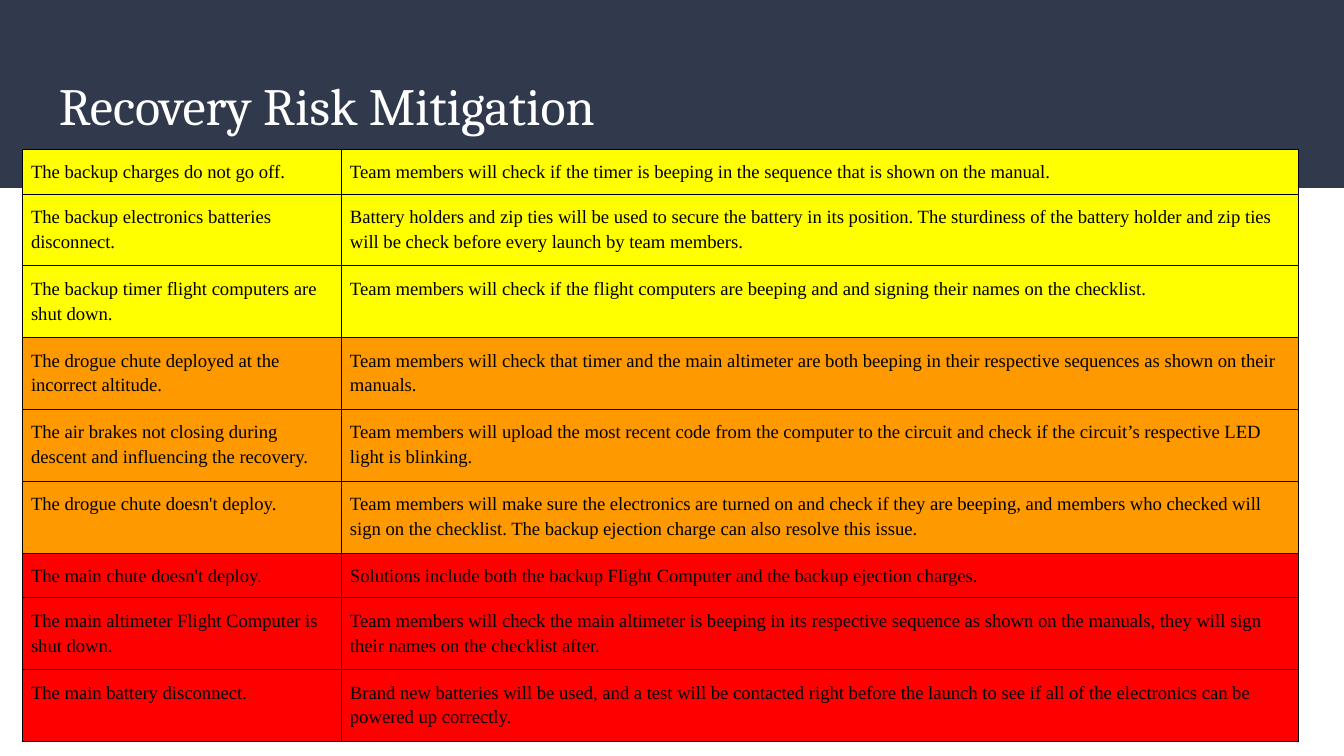
from lxml import etree
from pptx import Presentation
from pptx import util as u
from pptx.dml.color import RGBColor
from pptx.enum import shapes, text
from pptx.oxml import ns

PX = u.Inches(10) / 1344
NAVY = RGBColor(0x31, 0x39, 0x4D)
WHITE = RGBColor(0xFF, 0xFF, 0xFF)
BLACK = RGBColor(0x00, 0x00, 0x00)
YELLOW = RGBColor(0xFF, 0xFF, 0x00)
ORANGE = RGBColor(0xFF, 0x99, 0x00)
RED = RGBColor(0xFF, 0x00, 0x00)

ONE_LINE, TWO_LINES = 43, 68
RISKS = [
    (YELLOW, ONE_LINE, "The backup charges do not go off.",
     "Team members will check if the timer is beeping in the sequence that is shown on the manual."),
    (YELLOW, TWO_LINES, "The backup electronics batteries disconnect.",
     "Battery holders and zip ties will be used to secure the battery in its position. "
     "The sturdiness of the battery holder and zip ties will be check before every launch by team members."),
    (YELLOW, TWO_LINES, "The backup timer flight computers are shut down.",
     "Team members will check if the flight computers are beeping and and signing their names on the checklist."),
    (ORANGE, TWO_LINES, "The drogue chute deployed at the incorrect altitude.",
     "Team members will check that timer and the main altimeter are both beeping in their respective "
     "sequences as shown on their manuals."),
    (ORANGE, TWO_LINES, "The air brakes not closing during descent and influencing the recovery.",
     "Team members will upload the most recent code from the computer to the circuit and check if "
     "the circuit’s respective LED light is blinking."),
    (ORANGE, TWO_LINES, "The drogue chute doesn't deploy.",
     "Team members will make sure the electronics are turned on and check if they are beeping, and members "
     "who checked will sign on the checklist. The backup ejection charge can also resolve this issue."),
    (RED, ONE_LINE, "The main chute doesn't deploy.",
     "Solutions include both the backup Flight Computer and the backup ejection charges."),
    (RED, TWO_LINES, "The main altimeter Flight Computer is shut down.",
     "Team members will check the main altimeter is beeping in its respective sequence as shown on the manuals, "
     "they will sign their names on the checklist after."),
    (RED, TWO_LINES, "The main battery disconnect.",
     "Brand new batteries will be used, and a test will be contacted right before the launch to see if all "
     "of the electronics can be powered up correctly."),
]


def px(length):
    """Turn whole px into EMU."""
    return u.Emu(round(length * PX))


def set_margins(frame, margin):
    """Give a cell or text frame the same margin on every side."""
    frame.margin_left = frame.margin_right = px(margin)
    frame.margin_top = frame.margin_bottom = px(margin)


def format_text(frame, font_name, size, color):
    """Set the font of every run in a text frame."""
    for paragraph in frame.paragraphs:
        for run in paragraph.runs:
            run.font.name = font_name
            run.font.size = u.Pt(size)
            run.font.color.rgb = color


def add_header(slide, left, top, width, height):
    """Draw the title band with the slide title inside it."""
    band = slide.shapes.add_shape(
        shapes.MSO_SHAPE.RECTANGLE, px(left), px(top), px(width), px(height))
    band.shadow.inherit = False
    band.fill.solid()
    band.fill.fore_color.rgb = NAVY
    band.line.fill.background()
    title = slide.shapes.add_textbox(
        px(left + 46), px(top + 58), px(width - 92), px(91))
    frame = title.text_frame
    frame.word_wrap = True
    frame.vertical_anchor = text.MSO_ANCHOR.BOTTOM
    set_margins(frame, 13)
    frame.text = "Recovery Risk Mitigation"
    format_text(frame, "Cambria", 28, WHITE)


def add_borders(cell, color, width):
    """Outline the four sides of a table cell."""
    properties = cell._tc.get_or_add_tcPr()
    for side in ("a:lnL", "a:lnR", "a:lnT", "a:lnB"):
        line = etree.SubElement(properties, ns.qn(side), w=str(u.Pt(width)))
        fill = etree.SubElement(line, ns.qn("a:solidFill"))
        etree.SubElement(fill, ns.qn("a:srgbClr"), val=str(color))


def fill_cell(cell, words, color):
    """Write and style one table cell."""
    add_borders(cell, BLACK, 0.5)
    cell.fill.solid()
    cell.fill.fore_color.rgb = color
    set_margins(cell, 9)
    cell.text_frame.text = words
    cell.text_frame.paragraphs[0].line_spacing = 1.2
    format_text(cell.text_frame, "Times New Roman", 10, BLACK)


def add_risk_table(slide, left, top, width):
    """Draw the table of risks and mitigations, coloured by severity."""
    height = sum(risk[1] for risk in RISKS)
    table = slide.shapes.add_table(
        len(RISKS), 2, px(left), px(top), px(width), px(height)).table
    table.first_row = table.horz_banding = False
    table.columns[0].width = px(width // 4)
    table.columns[1].width = px(width - width // 4)
    for row, (color, row_height, *words) in zip(table.rows, RISKS):
        row.height = px(row_height)
        for cell, cell_words in zip(row.cells, words):
            fill_cell(cell, cell_words, color)


def main():
    """Build and save the presentation."""
    presentation = Presentation()
    presentation.slide_width = px(1344)
    presentation.slide_height = px(756)
    slide = presentation.slides.add_slide(presentation.slide_layouts[6])
    add_header(slide, 0, 0, 1344, 188)
    add_risk_table(slide, 22, 149, 1276)
    presentation.save("out.pptx")


if __name__ == "__main__":
    main()
